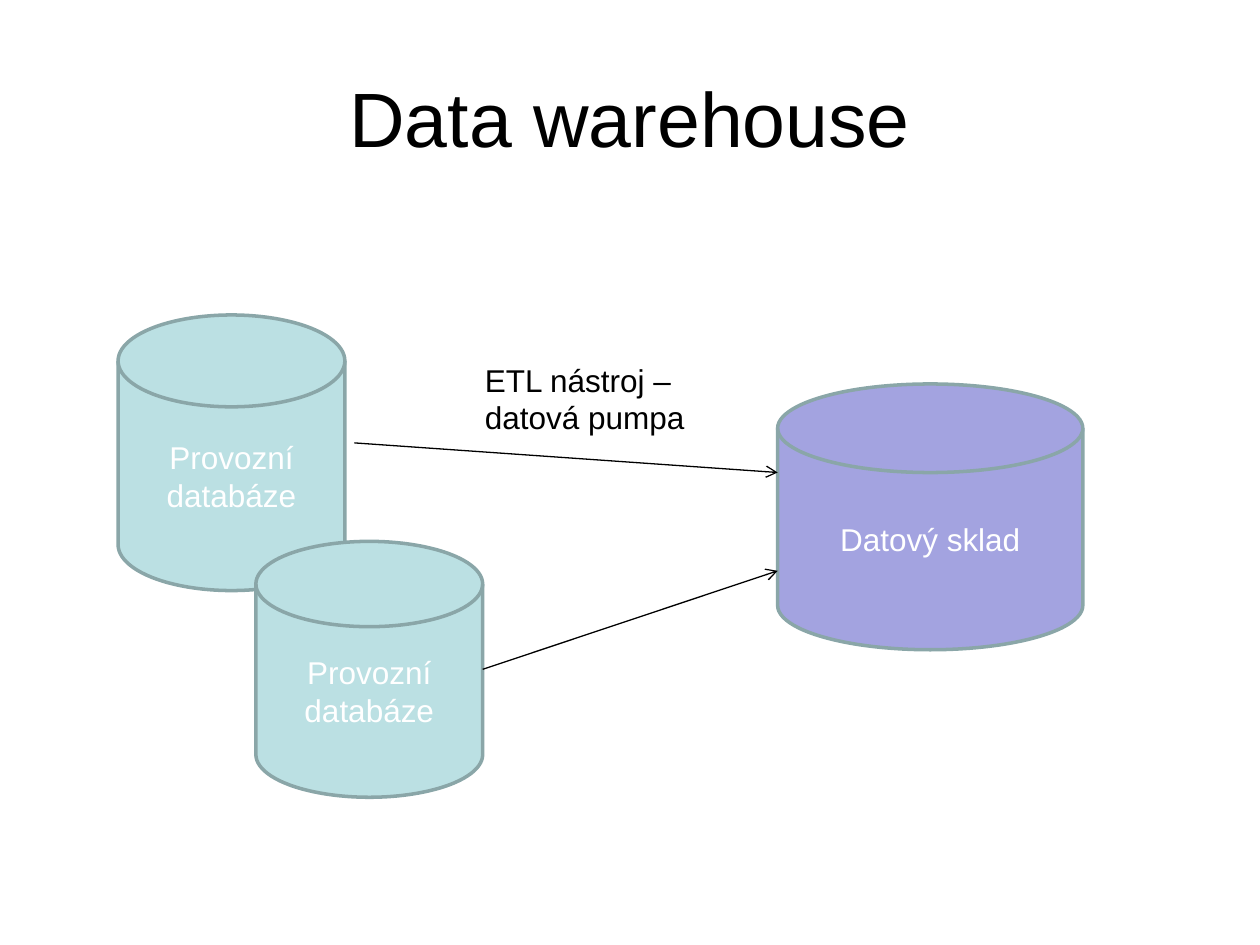
from dataclasses import dataclass

from lxml.etree import SubElement
from pptx import Presentation
from pptx.dml.color import RGBColor
from pptx.enum.shapes import MSO_CONNECTOR, MSO_SHAPE
from pptx.enum.text import MSO_ANCHOR, MSO_AUTO_SIZE, PP_ALIGN
from pptx.oxml.ns import qn
from pptx.util import Pt


@dataclass(frozen=True)
class Theme:
    font: str = "Arial"
    title_size: float = 44
    body_size: float = 18
    ink: str = "000000"
    light: str = "FFFFFF"
    source: str = "BBE0E3"
    store: str = "A3A3E0"
    outline: str = "8AA6A8"


@dataclass(frozen=True)
class Database:
    x: float
    y: float
    w: float
    h: float
    text: str
    fill: str


@dataclass(frozen=True)
class Flow:
    x1: float
    y1: float
    x2: float
    y2: float


THEME = Theme()
OPERATIONAL = "Provozní\ndatabáze"
DATABASES = [
    Database(67.5, 180, 129.6, 157.5, OPERATIONAL, THEME.source),
    Database(146.25, 309.4, 129.6, 146.2, OPERATIONAL, THEME.source),
    Database(444.4, 219.4, 174.4, 151.9, "Datový sklad", THEME.store),
]
FLOWS = [
    Flow(202.5, 253.1, 444.4, 270),
    Flow(275.8, 382.5, 444.4, 326.2),
]


def set_text(tf, text: str, size: float, color: str, align: PP_ALIGN) -> None:
    tf.text = text
    for p in tf.paragraphs:
        p.alignment = align
        for r in p.runs:
            r.font.name = THEME.font
            r.font.size = Pt(size)
            r.font.color.rgb = RGBColor.from_string(color)


def add_database(slide, db: Database) -> None:
    sp = slide.shapes.add_shape(MSO_SHAPE.FLOWCHART_MAGNETIC_DISK,
                                Pt(db.x), Pt(db.y), Pt(db.w), Pt(db.h))
    sp.shadow.inherit = False
    sp.fill.solid()
    sp.fill.fore_color.rgb = RGBColor.from_string(db.fill)
    sp.line.color.rgb = RGBColor.from_string(THEME.outline)
    sp.line.width = Pt(2)
    sp.text_frame.vertical_anchor = MSO_ANCHOR.MIDDLE
    set_text(sp.text_frame, db.text, THEME.body_size, THEME.light, PP_ALIGN.CENTER)


def add_flow(slide, flow: Flow) -> None:
    line = slide.shapes.add_connector(MSO_CONNECTOR.STRAIGHT, Pt(flow.x1), Pt(flow.y1),
                                      Pt(flow.x2), Pt(flow.y2))
    line.line.color.rgb = RGBColor.from_string(THEME.ink)
    line.line.width = Pt(0.75)
    SubElement(line.line._get_or_add_ln(), qn("a:tailEnd"), type="arrow")
    SubElement(line._element.spPr, qn("a:effectLst"))


def main() -> None:
    prs = Presentation()
    prs.slide_width, prs.slide_height = Pt(720), Pt(540)
    slide = prs.slides.add_slide(prs.slide_layouts[5])

    # Title
    title = slide.shapes.title
    title.left, title.top, title.width, title.height = Pt(36), Pt(21.6), Pt(648), Pt(90)
    title.text_frame.vertical_anchor = MSO_ANCHOR.MIDDLE
    set_text(title.text_frame, "Data warehouse", THEME.title_size, THEME.ink,
             PP_ALIGN.CENTER)

    # Operational databases and the warehouse
    for db in DATABASES:
        add_database(slide, db)

    # Data flows into the warehouse
    for flow in FLOWS:
        add_flow(slide, flow)

    # ETL label
    label = slide.shapes.add_textbox(Pt(270), Pt(202.5), Pt(129.6), Pt(51))
    label.text_frame.word_wrap = False
    label.text_frame.auto_size = MSO_AUTO_SIZE.SHAPE_TO_FIT_TEXT
    set_text(label.text_frame, "ETL nástroj –\ndatová pumpa", THEME.body_size,
             THEME.ink, PP_ALIGN.LEFT)

    prs.save("out.pptx")


if __name__ == "__main__":
    main()
